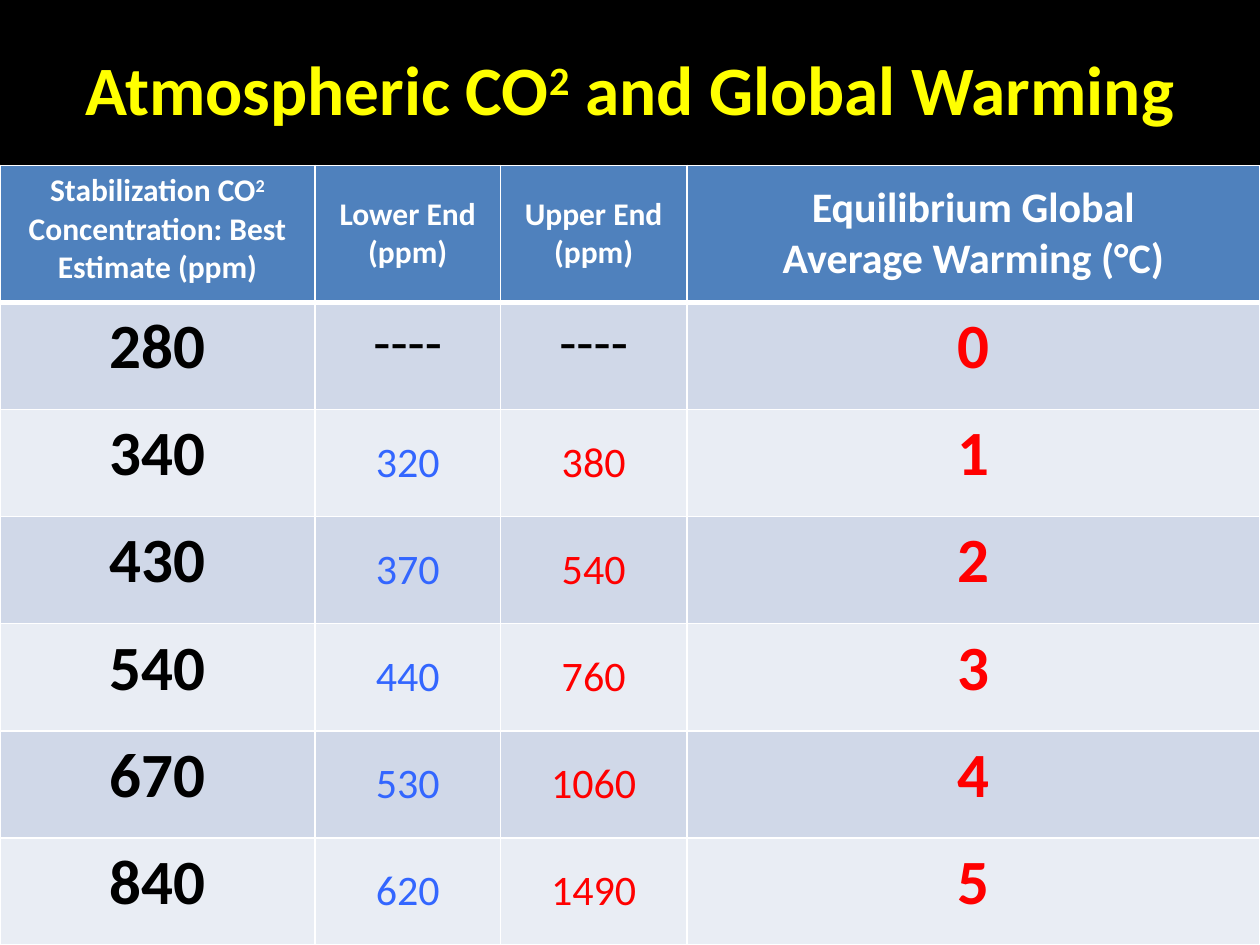
"""Build a slide with a table of carbon dioxide levels and global warming."""
from lxml import etree
from pptx import Presentation
from pptx.dml.color import RGBColor
from pptx.enum.text import MSO_ANCHOR, MSO_AUTO_SIZE, PP_ALIGN
from pptx.oxml.ns import qn
from pptx.util import Pt

CENTER = PP_ALIGN.CENTER
TOP, MIDDLE = MSO_ANCHOR.TOP, MSO_ANCHOR.MIDDLE
NO_FIT = MSO_AUTO_SIZE.NONE

THEME = {
    "font": "Calibri",
    "back": "000000",
    "title": "FFFF00",
    "head": "4F81BD",
    "bands": ("D0D8E8", "E9EDF4"),
    "rule": "FFFFFF",
    "white": "FFFFFF",
    "black": "000000",
    "red": "FF0000",
    "blue": "3366FF",
    "sizes": {"title": 39.6, "head": 18, "wide": 24, "key": 36, "dash": 32, "range": 24},
}

TITLE = "Atmospheric CO^2^ and Global Warming"
HEADS = [
    "Stabilization CO^2^ Concentration: Best Estimate (ppm)",
    "Lower End (ppm)",
    "Upper End (ppm)",
    "Equilibrium Global\nAverage Warming (°C)",
]
DASH = "----"
ROWS = [
    ("280", DASH, DASH, "0"),
    ("340", "320", "380", "1"),
    ("430", "370", "540", "2"),
    ("540", "440", "760", "3"),
    ("670", "530", "1060", "4"),
    ("840", "620", "1490", "5"),
]

WIDE, HIGH = 720, 540
TITLE_BOX = (36, 21.6, 648, 57.6)
TABLE_TOP, HEAD_HIGH, ROW_HIGH = 94.5, 78.3, 61.2
COLS = (180, 106, 106.5, 327.5)
THIN, THICK = 1, 3


def style(kind, color, bold):
    """Return the font values of one kind of text."""
    return {"name": THEME["font"], "size": Pt(THEME["sizes"][kind]),
            "bold": bold, "color": THEME[color]}


def write(frame, text, look):
    """Write centred lines, raising the parts between carets."""
    for num, line in enumerate(text.split("\n")):
        para = frame.add_paragraph() if num else frame.paragraphs[0]
        para.alignment = CENTER
        for part, words in enumerate(line.split("^")):
            run = para.add_run()
            run.text = words
            for key, value in look.items():
                if key == "color":
                    run.font.color.rgb = RGBColor.from_string(value)
                else:
                    setattr(run.font, key, value)
            if part % 2:
                run.font._element.set("baseline", "30000")


def edge(cell, sides):
    """Draw the cell borders at the given widths."""
    props = cell._tc.get_or_add_tcPr()
    for side, width in sides.items():
        line = etree.SubElement(props, qn(f"a:ln{side}"), w=str(Pt(width)))
        fill = etree.SubElement(line, qn("a:solidFill"))
        etree.SubElement(fill, qn("a:srgbClr"), val=THEME["rule"])


def look_of(row, col, text):
    """Return the font values and anchor of a table cell."""
    if row == 0:
        kind = "wide" if col == 3 else "head"
        return style(kind, "white", True), MIDDLE if col else TOP
    if col in (0, 3):
        return style("key", "red" if col else "black", True), TOP
    if text == DASH:
        return style("dash", "black", False), TOP
    return style("range", "blue" if col == 1 else "red", False), MIDDLE


def add_title(slide):
    """Place and write the title."""
    title = slide.shapes.title
    title.left, title.top, title.width, title.height = map(Pt, TITLE_BOX)
    frame = title.text_frame
    for key, value in {"word_wrap": True, "auto_size": NO_FIT,
                       "vertical_anchor": MIDDLE}.items():
        setattr(frame, key, value)
    write(frame, TITLE, style("title", "title", True))


def add_grid(slide):
    """Add the table and fill its cells."""
    data = [HEADS, *ROWS]
    highs = [HEAD_HIGH] + [ROW_HIGH] * len(ROWS)
    table = slide.shapes.add_table(len(data), len(COLS), 0, Pt(TABLE_TOP),
                                   Pt(WIDE), Pt(sum(highs))).table
    for col, width in zip(table.columns, COLS):
        col.width = Pt(width)
    for row, (texts, high) in enumerate(zip(data, highs)):
        table.rows[row].height = Pt(high)
        shade = THEME["bands"][(row - 1) % 2] if row else THEME["head"]
        for col, text in enumerate(texts):
            cell = table.cell(row, col)
            look, cell.vertical_anchor = look_of(row, col, text)
            write(cell.text_frame, text, look)
            edge(cell, {"L": THIN, "R": THIN, "T": THICK if row == 1 else THIN,
                        "B": THIN if row else THICK})
            cell.fill.solid()
            cell.fill.fore_color.rgb = RGBColor.from_string(shade)


def main():
    """Build and save the slide."""
    deck = Presentation()
    deck.slide_width, deck.slide_height = Pt(WIDE), Pt(HIGH)
    slide = deck.slides.add_slide(deck.slide_layouts[5])
    slide.background.fill.solid()
    slide.background.fill.fore_color.rgb = RGBColor.from_string(THEME["back"])
    add_title(slide)
    add_grid(slide)
    deck.save("out.pptx")


if __name__ == "__main__":
    main()
